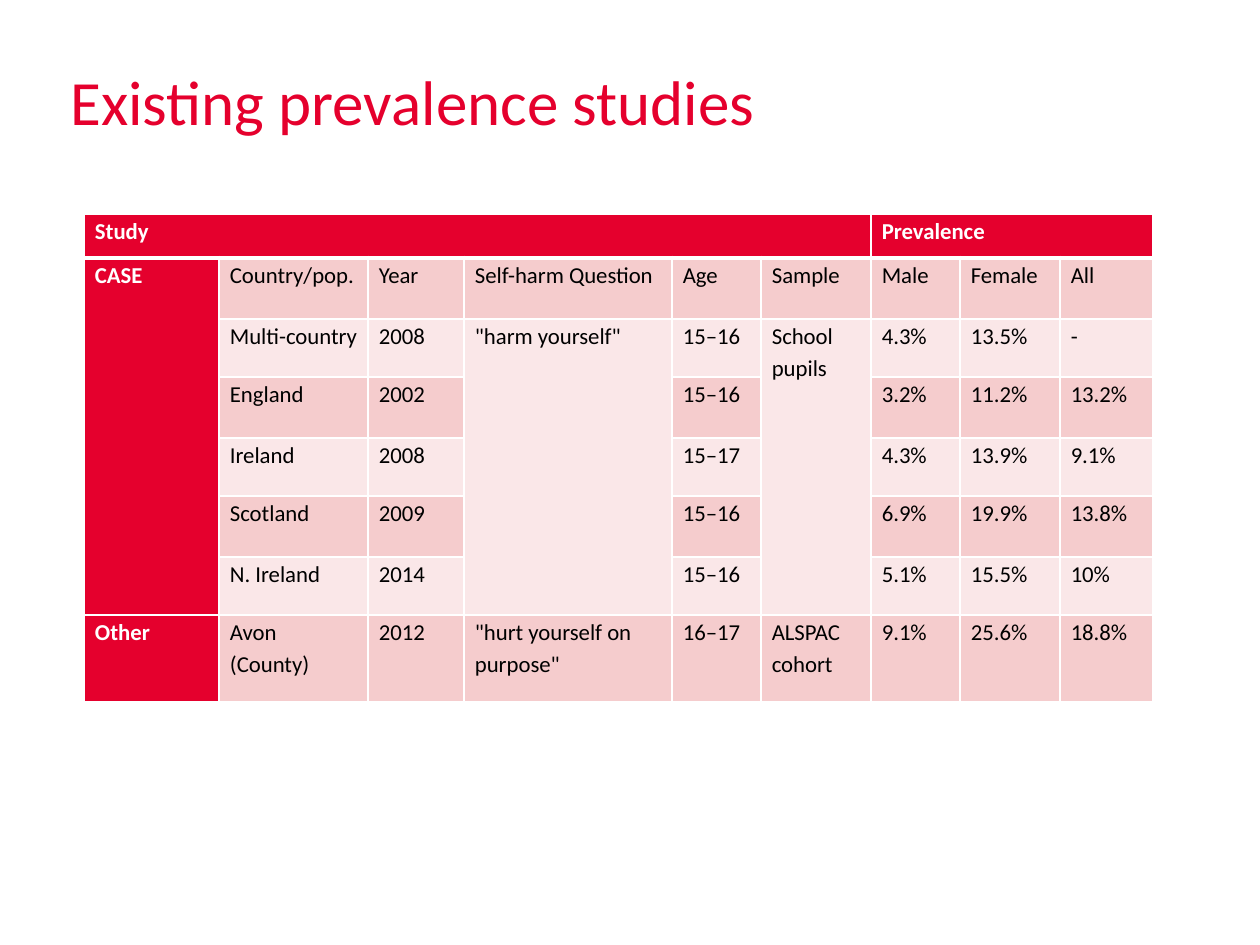
from lxml.etree import SubElement
from pptx import Presentation
from pptx.dml.color import RGBColor
from pptx.enum.text import MSO_ANCHOR as Anchor
from pptx.oxml.ns import qn
from pptx.util import Emu, Pt

SCALE = 914400 // 126
RED, ROSE, BLUSH, WHITE, BLACK = "E5002D", "F5CCCD", "FAE7E8", "FFFFFF", "000000"

COLUMNS = [135, 149, 96, 208, 89, 110, 89, 100, 93]
ROWS = [44, 61, 58, 61, 58, 61, 58, 87]
STUDIES = [
    ["Study", "", "", "", "", "", "Prevalence", "", ""],
    ["CASE", "Country/pop.", "Year", "Self-harm Question", "Age", "Sample", "Male", "Female", "All"],
    ["", "Multi-country", "2008", '"harm yourself"', "15–16", "School pupils", "4.3%", "13.5%", "-"],
    ["", "England", "2002", "", "15–16", "", "3.2%", "11.2%", "13.2%"],
    ["", "Ireland", "2008", "", "15–17", "", "4.3%", "13.9%", "9.1%"],
    ["", "Scotland", "2009", "", "15–16", "", "6.9%", "19.9%", "13.8%"],
    ["", "N. Ireland", "2014", "", "15–16", "", "5.1%", "15.5%", "10%"],
    ["Other", "Avon (County)", "2012", '"hurt yourself on purpose"', "16–17", "ALSPAC cohort",
     "9.1%", "25.6%", "18.8%"],
]
MERGES = [((0, 0), (0, 5)), ((0, 6), (0, 8)), ((1, 0), (6, 0)), ((2, 3), (6, 3)), ((2, 5), (6, 5))]


def px(length):
    """Turn whole pixels into EMU."""
    return Emu(length * SCALE)


def color(code):
    """Turn a hex string into a colour."""
    return RGBColor.from_string(code)


class SlideBuilder:
    """Hold the style and the current slide."""

    def __init__(self, deck, font="Calibri"):
        """Add a blank slide to the deck."""
        self.font = font
        self.slide = deck.slides.add_slide(deck.slide_layouts[6])

    def style(self, para, size, code, bold=False):
        """Format every run of a paragraph."""
        for span in para.runs:
            span.font.name = self.font
            span.font.size = Pt(size)
            span.font.bold = bold
            span.font.color.rgb = color(code)

    def title(self, text, left, top, width, height):
        """Add the slide title."""
        box = self.slide.shapes.add_textbox(px(left), px(top), px(width), px(height))
        frame = box.text_frame
        frame.word_wrap = True
        frame.vertical_anchor = Anchor.MIDDLE
        frame.text = text
        self.style(frame.paragraphs[0], 36, RED)

    def borders(self, cell, top, bottom):
        """Draw white lines around a cell."""
        properties = cell._tc.get_or_add_tcPr()
        for side, points in (("L", 1), ("R", 1), ("T", top), ("B", bottom)):
            line = SubElement(properties, qn(f"a:ln{side}"), w=str(Pt(points)))
            fill = SubElement(line, qn("a:solidFill"))
            SubElement(fill, qn("a:srgbClr"), val=WHITE)

    def cell(self, cell, text, row, column):
        """Fill and format one table cell."""
        heading = row == 0 or column == 0
        self.borders(cell, 3 if row == 1 else 1, 3 if row == 0 else 1)
        cell.fill.solid()
        cell.fill.fore_color.rgb = color(RED if heading else ROSE if row % 2 else BLUSH)
        cell.margin_left = cell.margin_right = px(11)
        cell.margin_top = cell.margin_bottom = 0
        cell.text_frame.text = text
        para = cell.text_frame.paragraphs[0]
        para.line_spacing = 1.15
        self.style(para, 13, WHITE if heading else BLACK, heading)

    def table(self, left, top, widths, heights, rows, merges):
        """Add a table with merged cells."""
        frame = self.slide.shapes.add_table(
            len(heights), len(widths), px(left), px(top), px(sum(widths)), px(sum(heights)))
        table = frame.table
        table.first_row = table.horz_banding = False
        for column, width in zip(table.columns, widths):
            column.width = px(width)
        for row, height in zip(table.rows, heights):
            row.height = px(height)
        for row, texts in enumerate(rows):
            for column, text in enumerate(texts):
                self.cell(table.cell(row, column), text, row, column)
        for first, last in merges:
            table.cell(*first).merge(table.cell(*last))


def main():
    """Build and save the deck."""
    deck = Presentation()
    deck.slide_width, deck.slide_height = px(1260), px(945)
    builder = SlideBuilder(deck)
    builder.title("Existing prevalence studies", 58, 61, 1134, 79)
    builder.table(84, 214, COLUMNS, ROWS, STUDIES, MERGES)
    deck.save("out.pptx")


if __name__ == "__main__":
    main()
